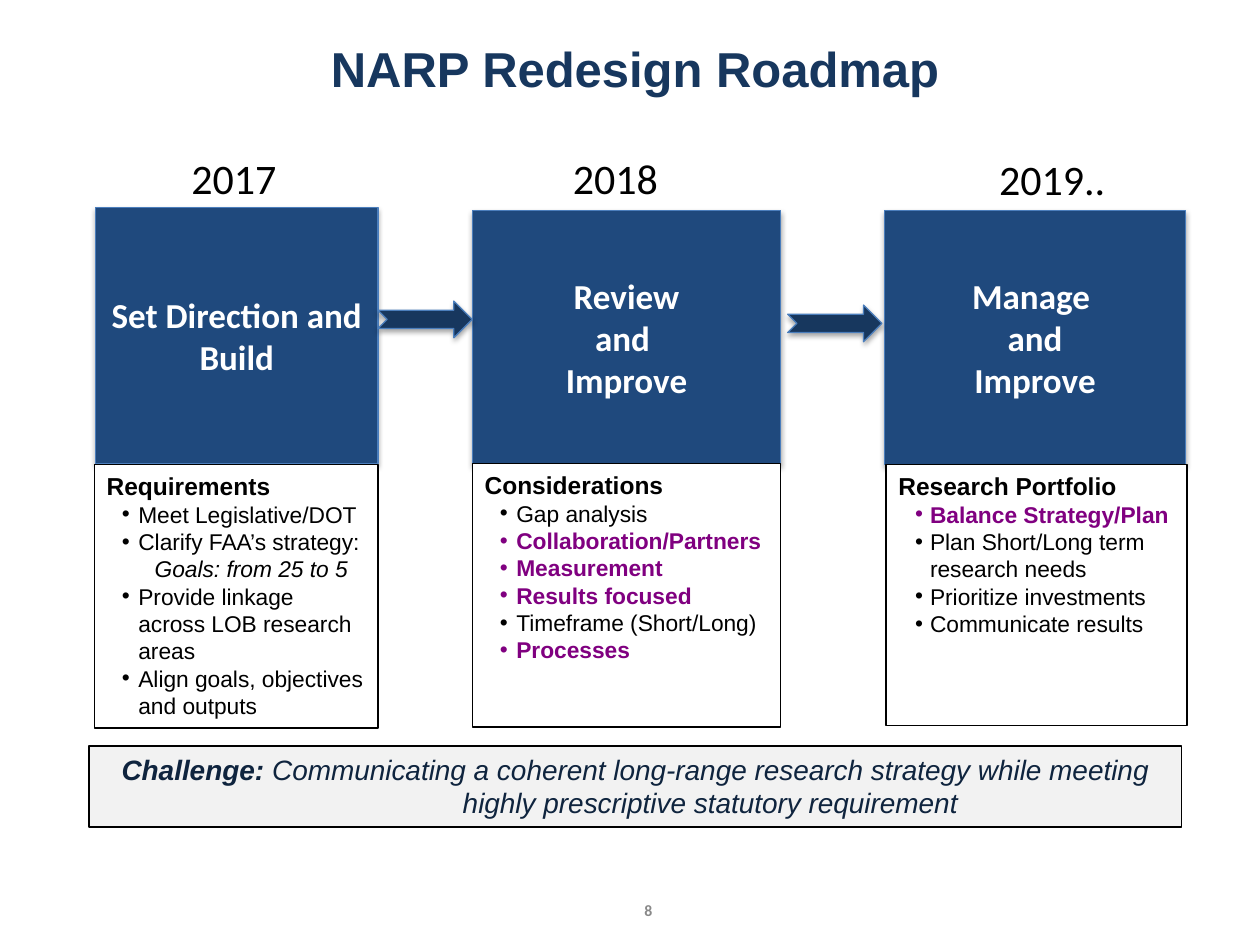
from dataclasses import dataclass
from typing import NamedTuple

from lxml import etree
from pptx import Presentation
from pptx.dml.color import RGBColor
from pptx.enum.shapes import MSO_SHAPE
from pptx.enum.text import MSO_ANCHOR, MSO_AUTO_SIZE, PP_ALIGN
from pptx.oxml.ns import qn
from pptx.util import Cm, Pt

RECTANGLE, ARROW = MSO_SHAPE.RECTANGLE, MSO_SHAPE.NOTCHED_RIGHT_ARROW
TOP, MIDDLE = MSO_ANCHOR.TOP, MSO_ANCHOR.MIDDLE
LEFT, CENTER = PP_ALIGN.LEFT, PP_ALIGN.CENTER
GROW = MSO_AUTO_SIZE.SHAPE_TO_FIT_TEXT

COLORS = {
    "title": "17375E", "stage": "1F497D", "stage_line": "4B7EBC",
    "arrow": "17375E", "white": "FFFFFF", "black": "000000",
    "highlight": "800080", "challenge": "0F243E", "panel": "F2F2F2",
    "page_number": "898989",
}


class Area(NamedTuple):
    """Left, top, width and height in centimetres."""
    left: float
    top: float
    width: float
    height: float


class Item(NamedTuple):
    text: str
    highlighted: bool = False
    tabbed_note: str = ""


@dataclass
class Phase:
    year: str
    year_area: Area
    stage: list[str]
    stage_area: Area
    heading: str
    items: list[Item]
    detail_area: Area
    bullet_hang: float


PHASES = [
    Phase("2017", Area(3.61, 2.95, 2.24, 1.27),
          ["Set Direction and ", "Build"], Area(1.93, 4.19, 5.69, 5.16),
          "Requirements",
          [Item("Meet Legislative/DOT"),
           Item("Clarify FAA’s strategy: ", tabbed_note="Goals: from 25 to 5"),
           Item("Provide linkage across LOB research areas"),
           Item("Align goals, objectives and outputs")],
          Area(1.9, 9.37, 5.72, 5.31), 0.33),
    Phase("2018", Area(11.3, 2.95, 2.24, 1.27),
          ["Review", "and ", "Improve"], Area(9.52, 4.24, 6.22, 5.13),
          "Considerations",
          [Item("Gap analysis"),
           Item("Collaboration/Partners", True),
           Item("Measurement", True),
           Item("Results focused", True),
           Item("Timeframe (Short/Long)"),
           Item("Processes", True)],
          Area(9.52, 9.35, 6.22, 5.31), 0.33),
    Phase("2019..", Area(19.89, 2.97, 2.67, 1.27),
          ["Manage ", "and", "Improve"], Area(17.83, 4.24, 6.07, 5.13),
          "Research Portfolio",
          [Item("Balance Strategy/Plan", True),
           Item("Plan Short/Long term research needs"),
           Item("Prioritize investments"),
           Item("Communicate results")],
          Area(17.86, 9.37, 6.07, 5.26), 0.3),
]
ARROWS = [Area(7.62, 6.07, 1.9, 0.74), Area(15.88, 6.15, 1.9, 0.74)]


def rgb(name: str) -> RGBColor:
    return RGBColor.from_string(COLORS[name])


def lengths(area: Area) -> list[Cm]:
    return [Cm(value) for value in area]


def add_span(para, text: str, *, size: float, color: str = "black",
             font: str = "Arial", bold: bool = False, italic: bool = False) -> None:
    span = para.add_run()
    span.text = text
    span.font.size, span.font.name = Pt(size), font
    span.font.bold, span.font.italic = bold, italic
    span.font.color.rgb = rgb(color)


def set_indent(para, margin: float, hang: float) -> None:
    properties = para._p.get_or_add_pPr()
    properties.set("marL", str(Cm(margin)))
    properties.set("indent", str(-Cm(hang)))


def add_bullet(para, hang: float, with_tab: bool) -> None:
    set_indent(para, 0.64, hang)
    properties = para._p.get_or_add_pPr()
    etree.SubElement(properties, qn("a:buFont"), typeface="Arial")
    etree.SubElement(properties, qn("a:buChar"), char="•")
    if with_tab:
        tabs = etree.SubElement(properties, qn("a:tabLst"))
        etree.SubElement(tabs, qn("a:tab"), pos=str(Cm(0.97)), algn="l")


def add_shadow(box) -> None:
    effects = box._element.spPr.find(qn("a:effectLst"))
    shadow = etree.SubElement(effects, qn("a:outerShdw"), blurRad=str(Pt(3.1)),
                              dist=str(Pt(1.8)), dir="5400000", rotWithShape="0")
    color = etree.SubElement(shadow, qn("a:srgbClr"), val=COLORS["black"])
    etree.SubElement(color, qn("a:alpha"), val="35000")


def add_box(page, area: Area, fill: str, line: str, *, kind=RECTANGLE,
            line_width: float = 0.75, anchor=TOP, shadow: bool = False):
    box = page.shapes.add_shape(kind, *lengths(area))
    box.shadow.inherit = False
    box.fill.solid()
    box.fill.fore_color.rgb = rgb(fill)
    box.line.color.rgb = rgb(line)
    box.line.width = Pt(line_width)
    box.text_frame.word_wrap = True
    box.text_frame.vertical_anchor = anchor
    if shadow:
        add_shadow(box)
    return box


def add_label(page, area: Area, text: str, *, align=CENTER, anchor=MIDDLE,
              wrap: bool = True, **style) -> None:
    frame = page.shapes.add_textbox(*lengths(area)).text_frame
    frame.word_wrap, frame.vertical_anchor = wrap, anchor
    para = frame.paragraphs[0]
    para.alignment = align
    add_span(para, text, **style)


def add_stage(page, phase: Phase) -> None:
    box = add_box(page, phase.stage_area, "stage", "stage_line", anchor=MIDDLE, shadow=True)
    frame = box.text_frame
    for index, text in enumerate(phase.stage):
        para = frame.add_paragraph() if index else frame.paragraphs[0]
        para.alignment = CENTER
        add_span(para, text, size=20, color="white", font="Calibri", bold=True)


def add_details(page, phase: Phase) -> None:
    frame = add_box(page, phase.detail_area, "white", "black").text_frame
    frame.auto_size = GROW
    heading = frame.paragraphs[0]
    heading.alignment = LEFT
    add_span(heading, phase.heading, size=14, bold=True)
    for item in phase.items:
        para = frame.add_paragraph()
        para.alignment = LEFT
        add_bullet(para, phase.bullet_hang, bool(item.tabbed_note))
        color = "highlight" if item.highlighted else "black"
        text = item.text + "\t" if item.tabbed_note else item.text
        add_span(para, text, size=13, color=color, bold=item.highlighted)
        if item.tabbed_note:
            add_span(para, item.tabbed_note, size=13, italic=True)


def add_challenge(page) -> None:
    box = add_box(page, Area(1.8, 15.04, 22.02, 1.63), "panel", "black", line_width=1)
    box.text_frame.auto_size = GROW
    para = box.text_frame.paragraphs[0]
    para.alignment = CENTER
    set_indent(para, 3.02, 3.02)
    style = {"size": 16, "color": "challenge", "italic": True}
    add_span(para, "Challenge: ", bold=True, **style)
    add_span(para, "Communicating a coherent long-range research strategy while meeting "
             "highly prescriptive statutory requirement", **style)


def main() -> None:
    deck = Presentation()
    deck.slide_width, deck.slide_height = Cm(25.4), Cm(19.05)
    page = deck.slides.add_slide(deck.slide_layouts[6])
    add_label(page, Area(0.2, 0.2, 25.2, 2.34), "NARP Redesign Roadmap",
              size=28, color="title", bold=True)
    add_label(page, Area(10.11, 18.01, 5.92, 0.66), "8",
              size=9, color="page_number", font="Calibri", bold=True)
    for phase in PHASES:
        add_stage(page, phase)
        add_label(page, phase.year_area, phase.year, align=LEFT, anchor=TOP,
                  wrap=False, size=24, font="Calibri")
    for area in ARROWS:
        add_box(page, area, "arrow", "stage_line", kind=ARROW, shadow=True)
    for phase in PHASES:
        add_details(page, phase)
    add_challenge(page)
    deck.save("out.pptx")


if __name__ == "__main__":
    main()
